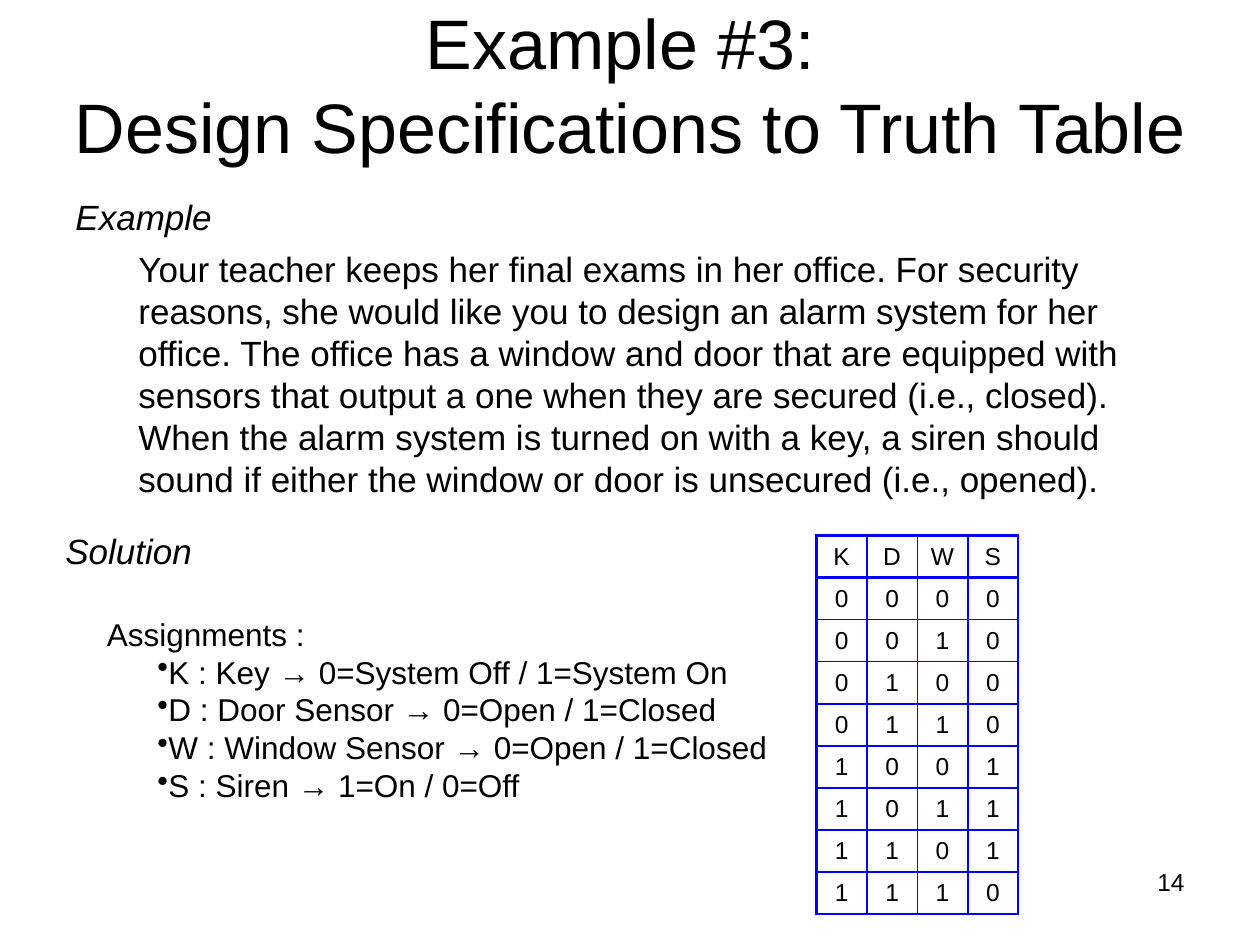
from lxml import etree
from pptx import Presentation
from pptx.dml.color import RGBColor
from pptx.enum import text
from pptx.oxml import ns
from pptx.util import Inches, Pt

BLACK = RGBColor(0x00, 0x00, 0x00)
WHITE = RGBColor(0xFF, 0xFF, 0xFF)
BLUE = RGBColor(0x00, 0x00, 0xFF)
FONT = "Arial"

PROBLEM = (
    "Your teacher keeps her final exams in her office. For security reasons, "
    "she would like you to design an alarm system for her office. The office "
    "has a window and door that are equipped with sensors that output a one "
    "when they are secured (i.e., closed). When the alarm system is turned on "
    "with a key, a siren should sound if either the window or door is "
    "unsecured (i.e., opened)."
)
ASSIGNMENTS = [
    "K : Key → 0=System Off / 1=System On",
    "D : Door Sensor → 0=Open / 1=Closed",
    "W : Window Sensor → 0=Open / 1=Closed",
    "S : Siren → 1=On / 0=Off",
]
TRUTH_TABLE = ["KDWS", "0000", "0010", "0100", "0110",
               "1001", "1011", "1101", "1110"]


def write(frame, content, size=18, italic=False, align=text.PP_ALIGN.LEFT,
          margin=0, indent=0, bullet=None, after=0):
    """Fill the frame's empty first paragraph, or add another one."""
    paragraph = frame.paragraphs[0] if not frame.text else frame.add_paragraph()
    paragraph.text = content
    paragraph.alignment = align
    paragraph.space_after = Pt(after)
    properties = paragraph._p.get_or_add_pPr()
    properties.set("marL", str(Inches(margin)))
    properties.set("indent", str(Inches(indent)))
    if bullet:
        etree.SubElement(properties, ns.qn("a:buChar"), char=bullet)
    for run in paragraph.runs:
        run.font.name = FONT
        run.font.size = Pt(size)
        run.font.italic = italic
        run.font.color.rgb = BLACK


def add_text_box(slide, left, top, width, height):
    box = slide.shapes.add_textbox(Inches(left), Inches(top),
                                   Inches(width), Inches(height))
    box.text_frame.word_wrap = True
    return box.text_frame


def set_title(slide, content):
    title = slide.shapes.title
    title.left, title.top = Inches(0), Inches(0)
    title.width, title.height = Inches(10), Inches(1.33)
    title.text_frame.vertical_anchor = text.MSO_ANCHOR.MIDDLE
    write(title.text_frame, content, size=40, align=text.PP_ALIGN.CENTER)


def set_borders(cell, **widths):
    properties = cell._tc.get_or_add_tcPr()
    for side in "LRTB":
        line = etree.SubElement(properties, ns.qn(f"a:ln{side}"),
                                w=str(Pt(widths[side])))
        fill = etree.SubElement(line, ns.qn("a:solidFill"))
        etree.SubElement(fill, ns.qn("a:srgbClr"), val=str(BLUE))


def add_truth_table(slide, rows, left, top, width, height):
    row_count, column_count = len(rows), len(rows[0])
    table = slide.shapes.add_table(row_count, column_count, Inches(left),
                                   Inches(top), Inches(width),
                                   Inches(height)).table
    table.first_row = table.horz_banding = False
    # Heavy rules frame the table, the header row and the output column
    heavy_rows = {0, 1, row_count}
    heavy_columns = {0, column_count - 1, column_count}
    for i, row in enumerate(rows):
        for j, value in enumerate(row):
            cell = table.cell(i, j)
            set_borders(cell,
                        L=1.5 if j in heavy_columns else 1,
                        R=1.5 if j + 1 in heavy_columns else 1,
                        T=1.5 if i in heavy_rows else 1,
                        B=1.5 if i + 1 in heavy_rows else 1)
            cell.fill.solid()
            cell.fill.fore_color.rgb = WHITE
            cell.vertical_anchor = text.MSO_ANCHOR.MIDDLE
            write(cell.text_frame, value, size=14, align=text.PP_ALIGN.CENTER)


def main():
    presentation = Presentation()
    presentation.slide_width = Inches(10)
    presentation.slide_height = Inches(7.5)
    slide = presentation.slides.add_slide(presentation.slide_layouts[5])
    set_title(slide, "Example #3: \vDesign Specifications to Truth Table")

    # Problem statement
    example = add_text_box(slide, 0.5, 1.5, 8.92, 2.52)
    write(example, "Example", size=20, italic=True, after=6)
    write(example, PROBLEM, size=20, margin=0.5)

    # Solution: variable assignments and truth table
    solution = add_text_box(slide, 0.42, 4.15, 1.42, 0.43)
    write(solution, "Solution", size=20, italic=True, after=6)
    assignments = add_text_box(slide, 0.75, 4.83, 5.83, 1.6)
    write(assignments, "Assignments :")
    for assignment in ASSIGNMENTS:
        write(assignments, assignment, margin=0.2, indent=0.2, bullet="•")
    add_truth_table(slide, TRUTH_TABLE, 6.48, 4.25, 1.6, 3)

    # Page number
    page_number = add_text_box(slide, 7.17, 6.83, 2.33, 0.52)
    write(page_number, "14", size=14, align=text.PP_ALIGN.RIGHT)

    presentation.save("out.pptx")


if __name__ == "__main__":
    main()
